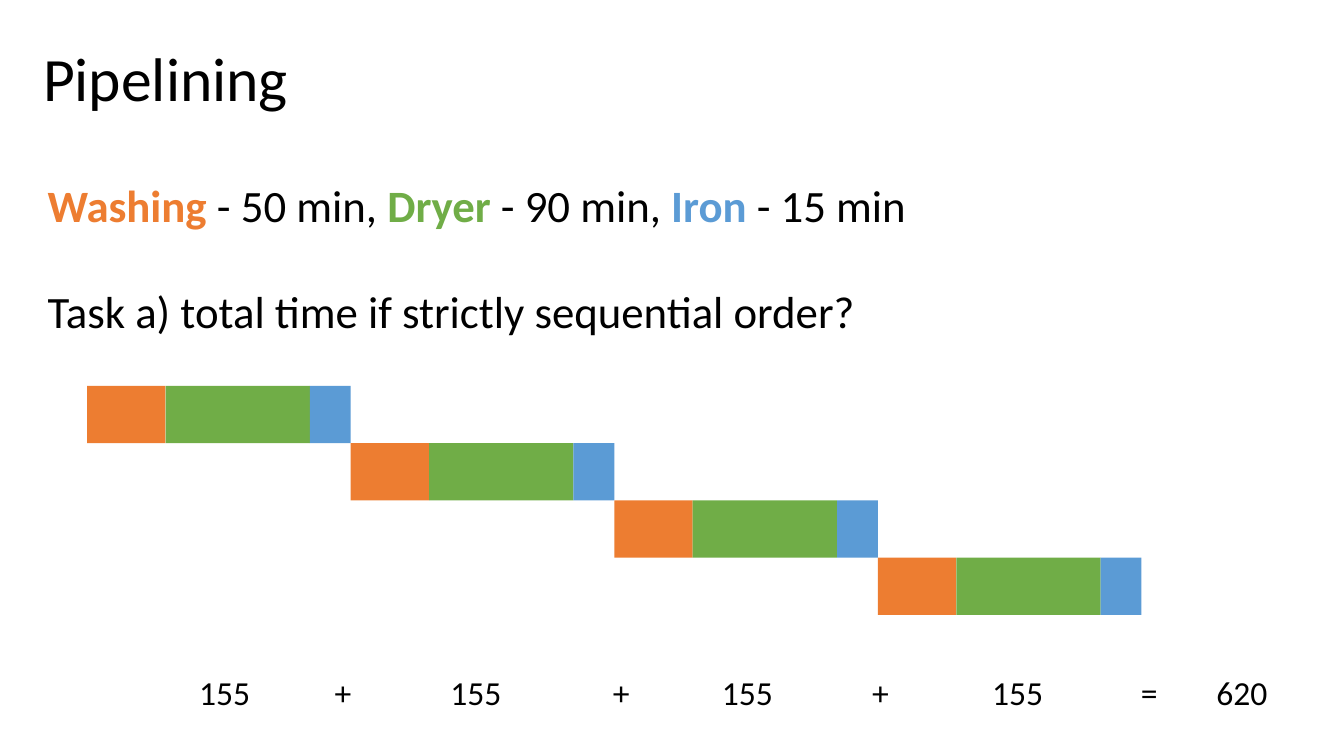
from dataclasses import dataclass

from pptx import Presentation
from pptx.dml.color import RGBColor as Color
from pptx.enum.shapes import MSO_SHAPE as Shape
from pptx.enum.text import MSO_ANCHOR as Anchor, PP_ALIGN as Align
from pptx.util import Pt


@dataclass(frozen=True)
class Theme:
    font: str = "Calibri"
    text: str = "000000"
    washing: str = "ED7D31"
    dryer: str = "70AD47"
    iron: str = "5B9BD5"
    title_size: int = 33
    body_size: int = 24
    sum_size: int = 18


THEME = Theme()

TITLE = "Pipelining"
STAGES = [
    ("Washing ", "- 50 min, ", THEME.washing, 42),
    ("Dryer ", "- 90 min, ", THEME.dryer, 77.3),
    ("Iron ", "- 15 min", THEME.iron, 21.9),
]
QUESTION = "Task a) total time if strictly sequential order?"
LOADS = 4
SUM_TERMS = [
    ("155", 45.4, 150),
    ("155", 180, 150),
    ("155", 325.4, 150),
    ("155", 470.2, 150),
    ("+", 162.7, 42),
    ("+", 311.8, 42),
    ("+", 450.7, 42),
    ("=", 594.7, 42),
    ("620", 625, 80.6),
]

MARGIN, CONTENT_WIDTH = 20.2, 679.7
BARS_LEFT, BARS_TOP, BAR_HEIGHT = 46.7, 206.7, 30.7
SUM_TOP, SUM_HEIGHT = 352.8, 34.6


def add_box(page, left, top, width, height, inset):
    box = page.shapes.add_textbox(Pt(left), Pt(top), Pt(width), Pt(height))
    frame = box.text_frame
    frame.word_wrap = True
    frame.margin_left = frame.margin_right = Pt(inset)
    frame.margin_top = frame.margin_bottom = Pt(inset)
    return frame


def style(span, size, color=THEME.text, bold=False):
    span.font.name = THEME.font
    span.font.size = Pt(size)
    span.font.bold = bold
    span.font.color.rgb = Color.from_string(color)


def add_title(page):
    frame = add_box(page, MARGIN, 0, CONTENT_WIDTH, 87.8, 2.9)
    frame.vertical_anchor = Anchor.MIDDLE
    frame.text = TITLE
    para = frame.paragraphs[0]
    para.line_spacing = 0.9
    style(para.runs[0], THEME.title_size)


def add_body(page):
    frame = add_box(page, MARGIN, 90, CONTENT_WIDTH, 103, 5.3)
    para = frame.paragraphs[0]
    for name, duration, color, _ in STAGES:
        for text, shade, bold in ((name, color, True), (duration, THEME.text, False)):
            span = para.add_run()
            span.text = text
            style(span, THEME.body_size, shade, bold)
    question = frame.add_paragraph()
    question.text = QUESTION
    question.space_before = Pt(28)
    style(question.runs[0], THEME.body_size)


def add_bars(page):
    left = BARS_LEFT
    for load in range(LOADS):
        top = BARS_TOP + load * BAR_HEIGHT
        for _, _, color, width in STAGES:
            bar = page.shapes.add_shape(
                Shape.RECTANGLE, Pt(left), Pt(top), Pt(width), Pt(BAR_HEIGHT)
            )
            bar.shadow.inherit = False
            bar.fill.solid()
            bar.fill.fore_color.rgb = Color.from_string(color)
            bar.line.fill.background()
            left += width


def add_sum(page):
    for text, left, width in SUM_TERMS:
        frame = add_box(page, left, SUM_TOP, width, SUM_HEIGHT, 7.2)
        frame.text = text
        para = frame.paragraphs[0]
        para.alignment = Align.CENTER
        style(para.runs[0], THEME.sum_size)


def main():
    deck = Presentation()
    deck.slide_width, deck.slide_height = Pt(720), Pt(405)
    page = deck.slides.add_slide(deck.slide_layouts[6])
    add_title(page)
    add_bars(page)
    add_body(page)
    add_sum(page)
    deck.save("out.pptx")


if __name__ == "__main__":
    main()
